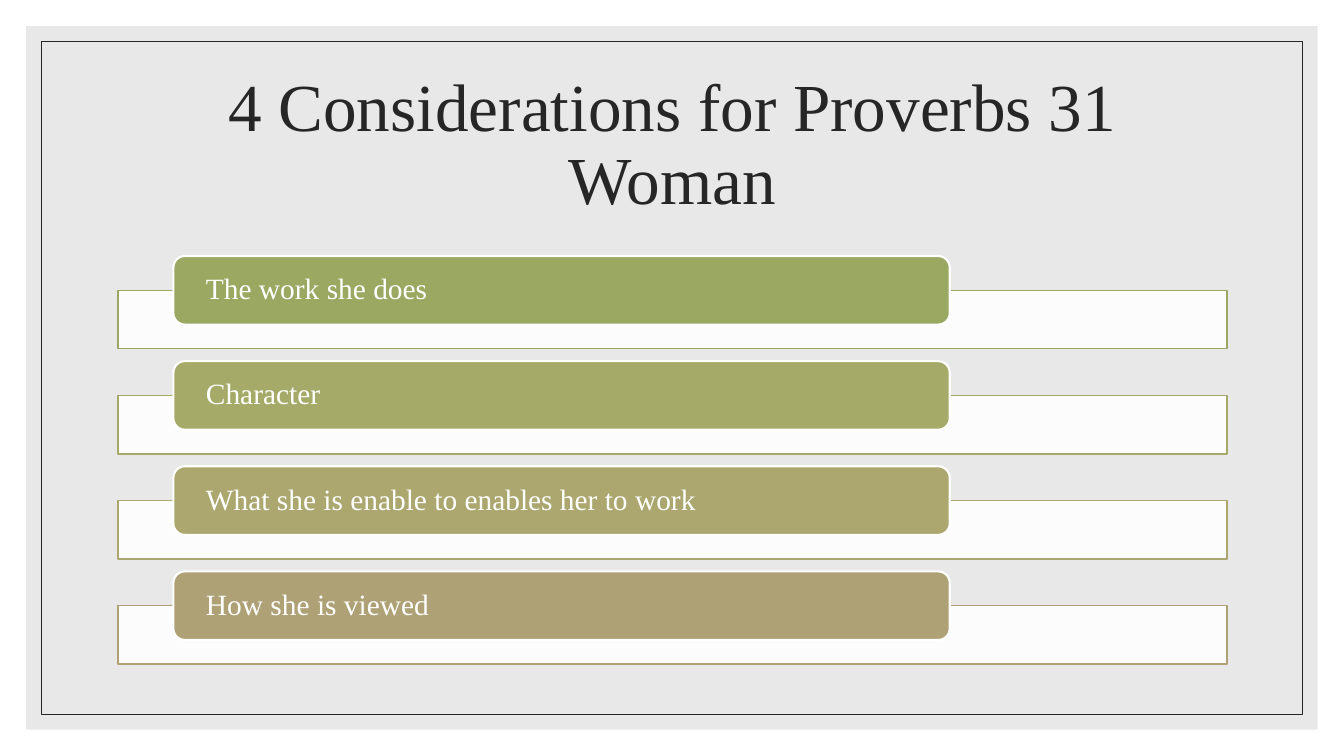
from pptx import Presentation
from pptx.dml.color import RGBColor
from pptx.enum.shapes import MSO_SHAPE
from pptx.enum.text import MSO_ANCHOR, MSO_AUTO_SIZE, PP_ALIGN
from pptx.oxml.ns import qn
from pptx.util import Inches, Pt
from lxml import etree

RECT, ROUNDED = MSO_SHAPE.RECTANGLE, MSO_SHAPE.ROUNDED_RECTANGLE
MIDDLE, LEFT, CENTER = MSO_ANCHOR.MIDDLE, PP_ALIGN.LEFT, PP_ALIGN.CENTER

TITLE = "4 Considerations for Proverbs 31 Woman"
CONSIDERATIONS = [
    ("The work she does", "olive"),
    ("Character", "moss"),
    ("What she is enable to enables her to work", "khaki"),
    ("How she is viewed", "sand"),
]
COLORS = {
    "white": "FFFFFF", "panel": "D9D9D9", "ink": "262626",
    "olive": "9AA862", "moss": "A6AA68", "khaki": "ABA76F", "sand": "ADA175",
}
FONT = "Times New Roman"

SLIDE_W, SLIDE_H = 13.33, 7.5
PANEL_MARGIN, BORDER_MARGIN = 0.26, 0.41
CONTENT_X, CONTENT_W = 1.17, 11
FIRST_Y, ROW_PITCH = 2.54, 1.043
BAR_DROP, BAR_H = 0.34, 0.58
LABEL_X, LABEL_W, LABEL_H = CONTENT_X + 0.05 * CONTENT_W, 0.7 * CONTENT_W, 0.68


def rgb(name):
    return RGBColor.from_string(COLORS[name])


def add_box(slide, kind, x, y, w, h, fill=None, alpha=None, line=None, width=1):
    """Add a shape; alpha is the fill's opacity in percent."""
    sp = slide.shapes.add_shape(kind, Inches(x), Inches(y), Inches(w), Inches(h))
    sp.shadow.inherit = False
    if fill:
        sp.fill.solid()
        sp.fill.fore_color.rgb = rgb(fill)
    else:
        sp.fill.background()
    if alpha:
        color = sp.fill._xPr.find(qn("a:solidFill"))[0]
        etree.SubElement(color, qn("a:alpha"), val=str(alpha * 1000))
    if line:
        sp.line.color.rgb = rgb(line)
        sp.line.width = Pt(width)
    else:
        sp.line.fill.background()
    return sp


def add_frame(slide, margin, **style):
    """Add a rectangle inset equally from every slide edge."""
    add_box(slide, RECT, margin, margin, SLIDE_W - 2 * margin,
            SLIDE_H - 2 * margin, **style)


def set_text(sp, text, size, color, align=LEFT, inset=0.1, inset_y=0):
    tf = sp.text_frame
    tf.word_wrap = True
    tf.auto_size = MSO_AUTO_SIZE.NONE
    tf.vertical_anchor = MIDDLE
    tf.margin_left = tf.margin_right = Inches(inset)
    tf.margin_top = tf.margin_bottom = Inches(inset_y)
    p = tf.paragraphs[0]
    p.alignment = align
    p.line_spacing = 0.9
    r = p.add_run()
    r.text = text
    r.font.name = FONT
    r.font.size = Pt(size)
    r.font.color.rgb = rgb(color)


def main():
    prs = Presentation()
    prs.slide_width, prs.slide_height = Inches(SLIDE_W), Inches(SLIDE_H)
    slide = prs.slides.add_slide(prs.slide_layouts[5])

    add_frame(slide, 0, fill="white")
    add_frame(slide, PANEL_MARGIN, fill="panel", alpha=60)
    add_frame(slide, BORDER_MARGIN, line="ink", width=0.5)

    title = slide.shapes.title
    title.left, title.top = Inches(CONTENT_X), Inches(0.7)
    title.width, title.height = Inches(CONTENT_W), Inches(1.5)
    set_text(title, TITLE, 48, "ink", align=CENTER, inset_y=0.05)
    slide.shapes._spTree.append(title._element)  # bring in front of the frames

    for row, (text, color) in enumerate(CONSIDERATIONS):
        y = FIRST_Y + row * ROW_PITCH
        add_box(slide, RECT, CONTENT_X, y + BAR_DROP, CONTENT_W, BAR_H,
                fill="white", alpha=90, line=color)
        label = add_box(slide, ROUNDED, LABEL_X, y, LABEL_W, LABEL_H,
                        fill=color, line="white", width=1.5)
        set_text(label, text, 21, "white", inset=0.29)

    prs.save("out.pptx")


if __name__ == "__main__":
    main()
